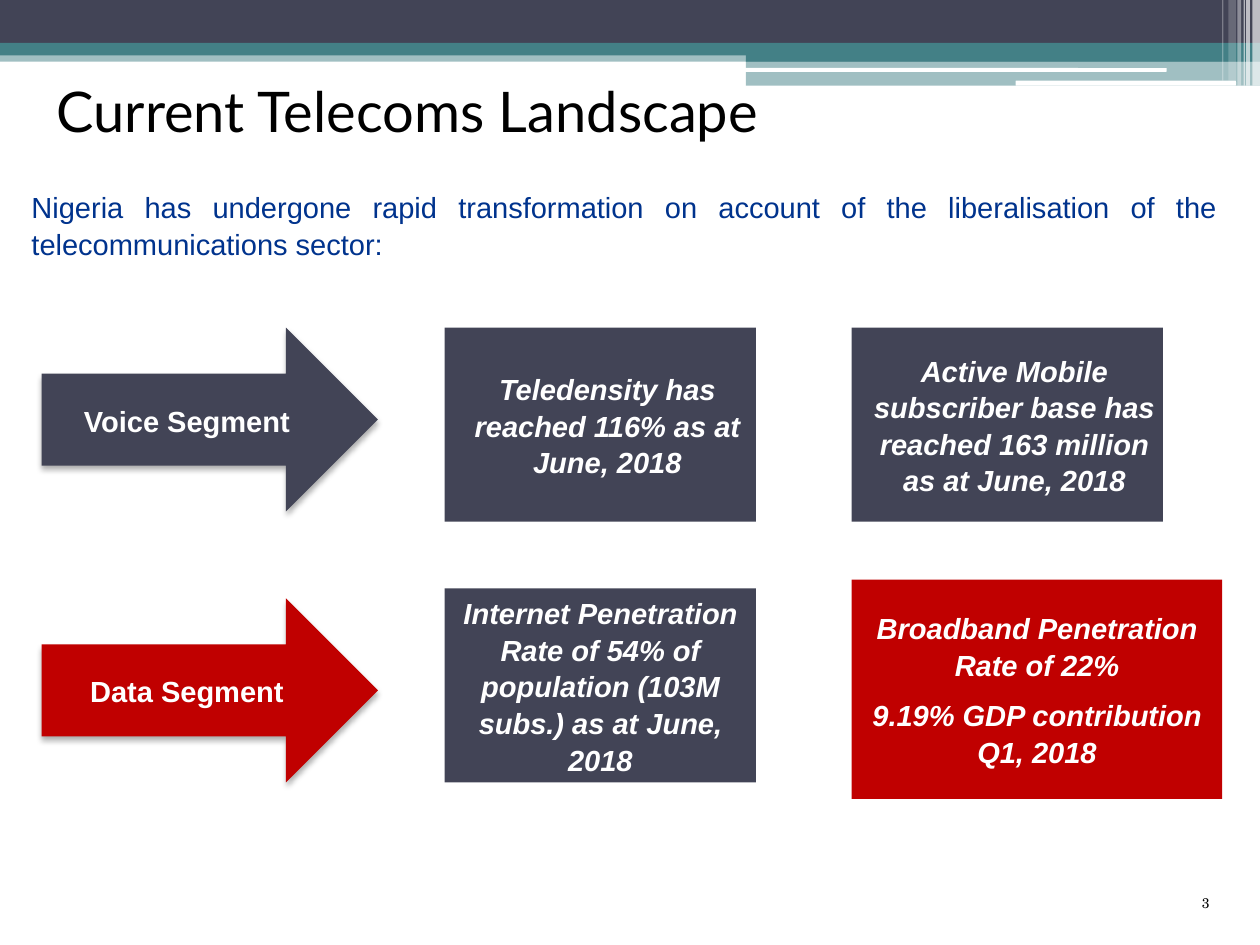
"""Build the Current Telecoms Landscape slide."""
from lxml import etree
from pptx import Presentation
from pptx.dml.color import RGBColor
from pptx.enum.shapes import MSO_SHAPE
from pptx.enum.text import MSO_ANCHOR, PP_ALIGN
from pptx.oxml import parse_xml
from pptx.oxml.ns import nsdecls, qn
from pptx.util import Inches, Pt

RECT, ROUND, ARROW = MSO_SHAPE.RECTANGLE, MSO_SHAPE.ROUNDED_RECTANGLE, MSO_SHAPE.RIGHT_ARROW
MIDDLE, TOP = MSO_ANCHOR.MIDDLE, MSO_ANCHOR.TOP
LEFT, CENTER, JUSTIFY = PP_ALIGN.LEFT, PP_ALIGN.CENTER, PP_ALIGN.JUSTIFY
SLATE, TEAL, RED, WHITE, BLACK = "424456", "438086", "C00000", "FFFFFF", "000000"

prs = Presentation()
prs.slide_width, prs.slide_height = Inches(10), Inches(7.5)
s = prs.slides.add_slide(prs.slide_layouts[6])


def add_block(kind, box, color, alpha=100):
    sp = s.shapes.add_shape(kind, *map(Inches, box))
    sp.shadow.inherit = False
    sp.line.fill.background()
    sp.fill.solid()
    sp.fill.fore_color.rgb = RGBColor.from_string(color)
    if alpha < 100:
        clr = sp.fill._xPr.find(qn("a:solidFill"))[0]
        etree.SubElement(clr, qn("a:alpha"), val=str(alpha * 1000))
    return sp


def write(sp, lines, size=16.6, color=WHITE, font="Arial", align=CENTER, anchor=MIDDLE,
          inset=(0, 0), bold=False, italic=False, spacing=1.05, indent=0, wrap=True):
    tf = sp.text_frame
    tf.word_wrap, tf.vertical_anchor = wrap, anchor
    tf.margin_left = tf.margin_right = Inches(inset[0])
    tf.margin_top = tf.margin_bottom = Inches(inset[1])
    for i, line in enumerate(lines):
        p = tf.paragraphs[0] if i == 0 else tf.add_paragraph()
        p.text, p.alignment, p.line_spacing = line, align, spacing
        if i:
            p.space_before = Pt(8)
        if indent:
            p._p.get_or_add_pPr().set("marL", str(Inches(indent)))
        p.font.name, p.font.size = font, Pt(size)
        p.font.bold, p.font.italic = bold, italic
        p.font.color.rgb = RGBColor.from_string(color)


for box, color, alpha in [
    ((0, 0.4, 10, 0.09), TEAL, 50),
    ((0, 0, 10, 0.34), SLATE, 100),
    ((0, 0.34, 10, 0.1), TEAL, 100),
    ((5.92, 0.39, 4.08, 0.1), TEAL, 100),
    ((5.92, 0.48, 4.08, 0.2), TEAL, 50),
]:
    add_block(RECT, box, color, alpha)

for box in [(5.91, 0.54, 3.35, 0.03), (8.06, 0.64, 1.75, 0.04)]:
    add_block(ROUND, box, WHITE)

for left, width, height, alpha in [
    (9.94, 0.06, 0.68, 65), (9.89, 0.03, 0.68, 65), (9.87, 0.01, 0.68, 60),
    (9.82, 0.03, 0.68, 40), (9.75, 0.06, 0.64, 20), (9.7, 0.01, 0.64, 30),
]:
    add_block(RECT, (left, 0, width, height), WHITE, alpha)

intro = s.shapes.add_textbox(Inches(0.2), Inches(1.44), Inches(9.5), Inches(0.78))
write(intro, ["Nigeria has undergone rapid transformation on account of the liberalisation "
              "of the telecommunications sector:"],
      color="00338D", align=JUSTIFY, anchor=TOP, inset=(0.05, 0.05))

for box, color, lines, indent, inset in [
    ((3.53, 2.6, 2.47, 1.54), SLATE, ["Teledensity has reached 116% as at June, 2018"], 0.11, 0),
    ((3.53, 4.67, 2.47, 1.54), SLATE,
     ["Internet Penetration Rate of 54% of population (103M subs.) as at June, 2018"], 0, 0),
    ((6.76, 2.6, 2.47, 1.54), SLATE,
     ["Active Mobile subscriber base has reached 163 million as at June, 2018"], 0.11, 0),
    ((6.76, 4.6, 2.94, 1.74), RED,
     ["Broadband Penetration Rate of 22%", "9.19% GDP contribution Q1, 2018"], 0, 0.09),
]:
    sp = add_block(RECT, box, color)
    write(sp, lines, bold=True, italic=True, indent=indent, inset=(inset, 0))

for top, color, label in [(2.6, SLATE, "Voice Segment"), (4.75, RED, "Data Segment")]:
    sp = add_block(ARROW, (0.33, top, 2.67, 1.46), color)
    write(sp, [label], bold=True, wrap=False)
    effects = sp._element.spPr.find(qn("a:effectLst"))
    effects.append(parse_xml(
        f'<a:outerShdw {nsdecls("a")} blurRad="{Pt(3.5)}" dist="{Pt(2.2)}" dir="5400000" '
        'rotWithShape="0"><a:srgbClr val="000000"><a:alpha val="32000"/></a:srgbClr></a:outerShdw>'))

title = s.shapes.add_textbox(Inches(0.35), Inches(0.54), Inches(8.9), Inches(0.66))
write(title, ["Current Telecoms Landscape"], size=32, color=BLACK, font="Lato", align=LEFT,
      inset=(0.1, 0.05), spacing=1.0)

number = s.shapes.add_textbox(Inches(9.44), Inches(7.05), Inches(0.56), Inches(0.32))
write(number, ["3"], size=8, color=BLACK, font="TeX Gyre Schola", align=LEFT, anchor=TOP,
      inset=(0.1, 0.05), spacing=1.0)

prs.save("out.pptx")
